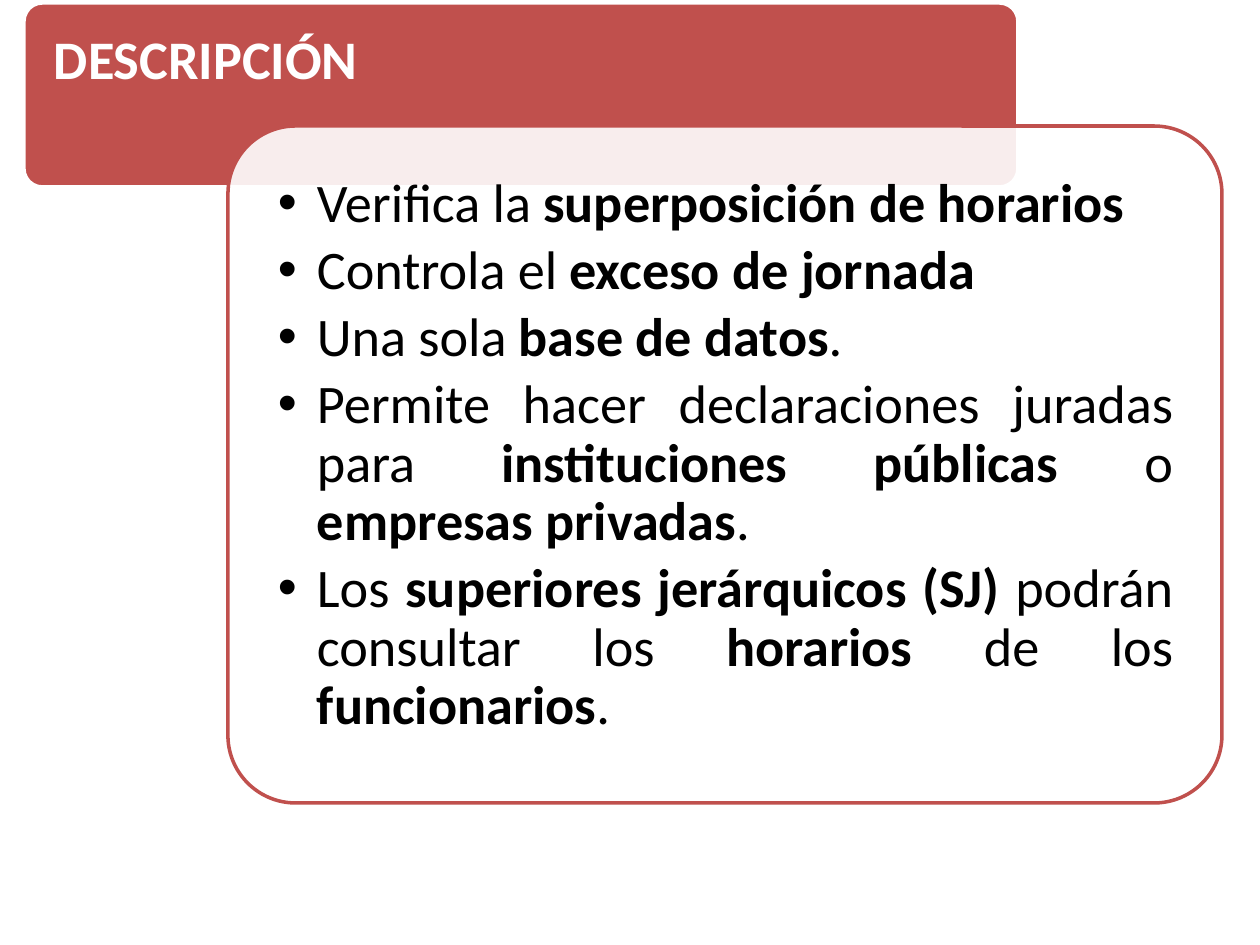
from pptx import Presentation
from pptx.dml.color import RGBColor
from pptx.enum.shapes import MSO_SHAPE
from pptx.enum.text import MSO_ANCHOR, PP_ALIGN
from pptx.oxml.ns import qn
from pptx.util import Pt
from lxml.etree import SubElement

SCALE = 914400 / 126
RED, WHITE, BLACK = "C0504D", "FFFFFF", "000000"
POINTS = [
    "Verifica la *superposición de horarios*",
    "Controla el *exceso de jornada*",
    "Una sola *base de datos*.",
    "Permite hacer declaraciones juradas para *instituciones públicas *o* empresas privadas*.",
    "Los *superiores jerárquicos (SJ) *podrán consultar los *horarios* de los *funcionarios*.",
]


def px(size):
    """Turn px into EMU."""
    return round(size * SCALE)


def rgb(code):
    """Turn a hex string into a colour."""
    return RGBColor.from_string(code)


class Deck:
    """Hold the style and the current slide."""

    font, size, pad, hang = "Calibri", 31, 30, 39

    def __init__(self, width, height):
        """Start a deck with one blank slide."""
        self.show = Presentation()
        self.show.slide_width, self.show.slide_height = px(width), px(height)
        self.slide = self.show.slides.add_slide(self.show.slide_layouts[6])

    def panel(self, box, fill, line, alpha=100):
        """Add a rounded panel."""
        shape = self.slide.shapes.add_shape(MSO_SHAPE.ROUNDED_RECTANGLE, *map(px, box))
        shape.adjustments[0] = 0.1
        shape.shadow.inherit = False
        shape.fill.solid()
        shape.fill.fore_color.rgb = rgb(fill)
        shape.line.color.rgb = rgb(line)
        shape.line.width = Pt(2)
        if alpha < 100:
            color = shape.fill._xPr.find(".//" + qn("a:srgbClr"))
            SubElement(color, qn("a:alpha"), val=str(alpha * 1000))

    def frame(self, box, foot):
        """Add a wrapping text box and return its frame."""
        frame = self.slide.shapes.add_textbox(*map(px, box)).text_frame
        frame.word_wrap = True
        frame.vertical_anchor = MSO_ANCHOR.TOP
        frame.margin_left = frame.margin_right = frame.margin_top = px(self.pad)
        frame.margin_bottom = px(foot)
        return frame

    def style(self, para, color, after):
        """Set spacing and font of a paragraph and its runs."""
        para.line_spacing = 0.9
        para.space_after = Pt(after)
        for item in (para, *para.runs):
            item.font.name = self.font
            item.font.size = Pt(self.size)
            item.font.color.rgb = rgb(color)

    def title(self, box, text):
        """Add the bold heading."""
        frame = self.frame(box, 16)
        frame.text = text
        para = frame.paragraphs[0]
        self.style(para, WHITE, 11)
        para.runs[0].font.bold = True

    def bullets(self, box, items):
        """Add a justified list with starred parts in bold."""
        frame = self.frame(box, self.pad)
        for index, item in enumerate(items):
            para = frame.add_paragraph() if index else frame.paragraphs[0]
            para.level = 1
            para.alignment = PP_ALIGN.JUSTIFY
            props = para._p.get_or_add_pPr()
            props.set("marL", str(px(self.hang)))
            props.set("indent", str(-px(self.hang)))
            SubElement(props, qn("a:buFont"), typeface="Arial")
            SubElement(props, qn("a:buChar"), char="•")
            for place, part in enumerate(item.split("*")):
                if part:
                    run = para.add_run()
                    run.text = part
                    run.font.bold = place % 2 == 1
            self.style(para, BLACK, 4.7)


def main():
    """Build and save the slide."""
    deck = Deck(1260, 945)
    deck.panel((24, 3, 994, 184), RED, WHITE)
    deck.title((24, 3, 994, 123), "DESCRIPCIÓN")
    deck.panel((228, 126, 994, 677), WHITE, RED, 90)
    deck.bullets((248, 146, 955, 638), POINTS)
    deck.show.save("out.pptx")


if __name__ == "__main__":
    main()
